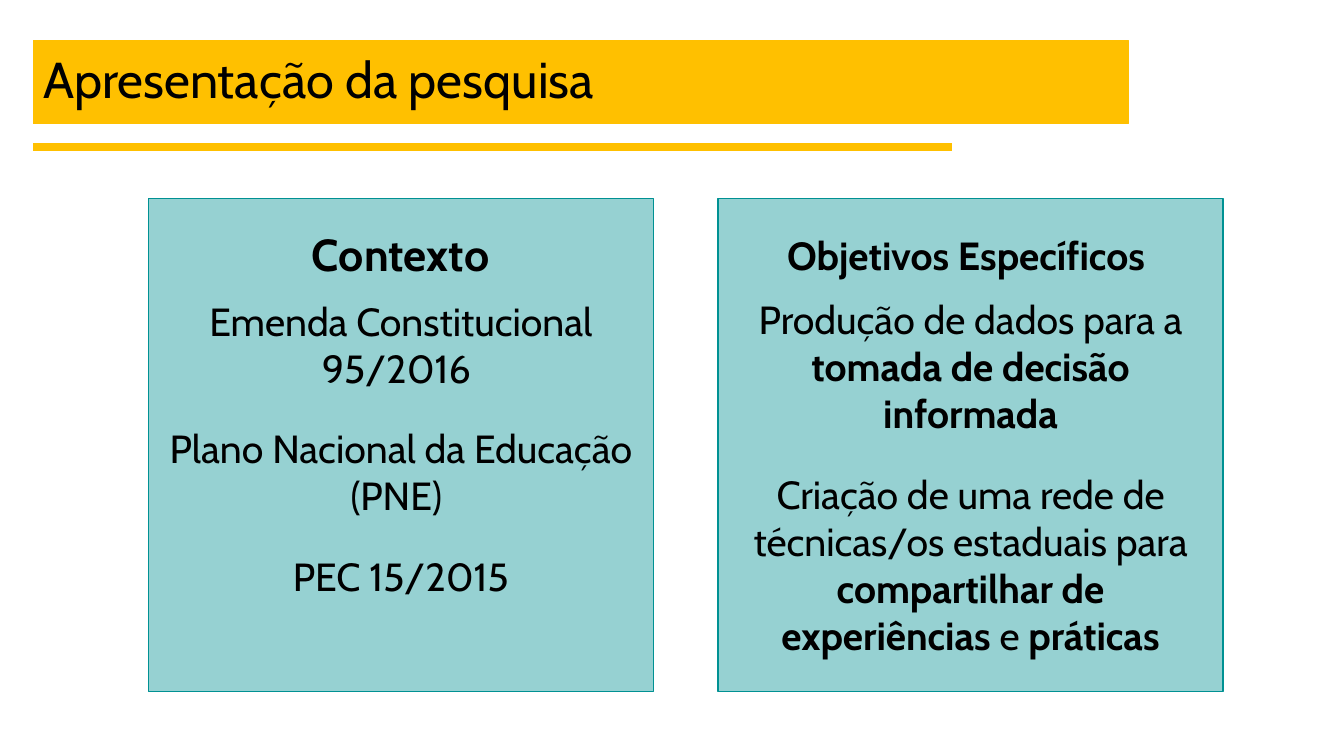
"""Builds the research presentation slide with a title bar and two text cards."""
from pptx import Presentation
from pptx.dml.color import RGBColor
from pptx.enum.shapes import MSO_CONNECTOR, MSO_SHAPE
from pptx.enum.text import MSO_ANCHOR, PP_ALIGN
from pptx.util import Inches, Pt
from lxml import etree

RECTANGLE = MSO_SHAPE.RECTANGLE
STRAIGHT = MSO_CONNECTOR.STRAIGHT
MIDDLE = MSO_ANCHOR.MIDDLE
LEFT, CENTER = PP_ALIGN.LEFT, PP_ALIGN.CENTER
DRAWING = "{http://schemas.openxmlformats.org/drawingml/2006/main}"

TITLE = "Apresentação da pesquisa"
CARDS = [
    {
        "heading": "Contexto",
        "heading_size": 32,
        "bottom_inset": 0.69,
        "items": [
            [("Emenda Constitucional 95/2016 ", False)],
            [("Plano Nacional da Educação (PNE) ", False)],
            [("PEC 15/2015", False)],
        ],
    },
    {
        "heading": "Objetivos Específicos ",
        "heading_size": 28,
        "bottom_inset": 0.05,
        "items": [
            [("Produção de dados para a ", False), ("tomada de decisão informada", True)],
            [
                ("Criação de uma rede de técnicas/os estaduais para ", False),
                ("compartilhar de experiências ", True),
                ("e ", False),
                ("práticas", True),
            ],
        ],
    },
]

THEME = {
    "font": "Cabin",
    "text": RGBColor(0, 0, 0),
    "accent": RGBColor(0xFF, 0xC0, 0x00),
    "card": RGBColor(0x00, 0x91, 0x93),
    "card_opacity": 41,
    "title_size": 36,
    "body_size": 28,
    "item_gap": 12,
}

MARGIN = 0.33
CARD_LEFT, CARD_TOP = 1.47, 1.97
CARD_WIDTH, CARD_HEIGHT, CARD_GAP = 5.01, 4.89, 0.64


def add_box(page, left, top, width, height, color, line_width):
    box = page.shapes.add_shape(
        RECTANGLE, Inches(left), Inches(top), Inches(width), Inches(height))
    box.shadow.inherit = False
    box.fill.solid()
    box.fill.fore_color.rgb = color
    box.line.color.rgb = color
    box.line.width = Pt(line_width)
    box.text_frame.word_wrap = True
    box.text_frame.vertical_anchor = MIDDLE
    return box


def write(para, spans, size, align, gap=0):
    para.alignment = align
    para.space_before = para.space_after = Pt(gap)
    for text, bold in spans:
        span = para.add_run()
        span.text = text
        span.font.name = THEME["font"]
        span.font.size = Pt(size)
        span.font.bold = bold
        span.font.color.rgb = THEME["text"]


def add_rule(page):
    rule = page.shapes.add_connector(
        STRAIGHT, Inches(MARGIN), Inches(1.46), Inches(9.44), Inches(1.46))
    rule.line.color.rgb = THEME["accent"]
    rule.line.width = Pt(6)
    etree.SubElement(rule._element.spPr, DRAWING + "effectLst")


def add_title(page):
    box = add_box(page, MARGIN, 0.4, 10.86, 0.83, THEME["accent"], 0.75)
    para = box.text_frame.paragraphs[0]
    write(para, [(TITLE, False)], THEME["title_size"], LEFT)
    para.line_spacing = 0.9


def add_card(page, index, card):
    left = CARD_LEFT + index * (CARD_WIDTH + CARD_GAP)
    box = add_box(page, left, CARD_TOP, CARD_WIDTH, CARD_HEIGHT, THEME["card"], 1)
    color = box._element.spPr.find(f"{DRAWING}solidFill/{DRAWING}srgbClr")
    etree.SubElement(color, DRAWING + "alpha", val=str(THEME["card_opacity"] * 1000))
    frame = box.text_frame
    frame.margin_bottom = Inches(card["bottom_inset"])
    write(frame.paragraphs[0], [(card["heading"], True)], card["heading_size"], CENTER)
    for spans in card["items"]:
        write(frame.add_paragraph(), spans, THEME["body_size"], CENTER, THEME["item_gap"])


def main():
    deck = Presentation()
    deck.slide_width, deck.slide_height = Inches(13.33), Inches(7.5)
    page = deck.slides.add_slide(deck.slide_layouts[6])
    add_rule(page)
    add_title(page)
    for index, card in enumerate(CARDS):
        add_card(page, index, card)
    deck.save("out.pptx")


if __name__ == "__main__":
    main()
